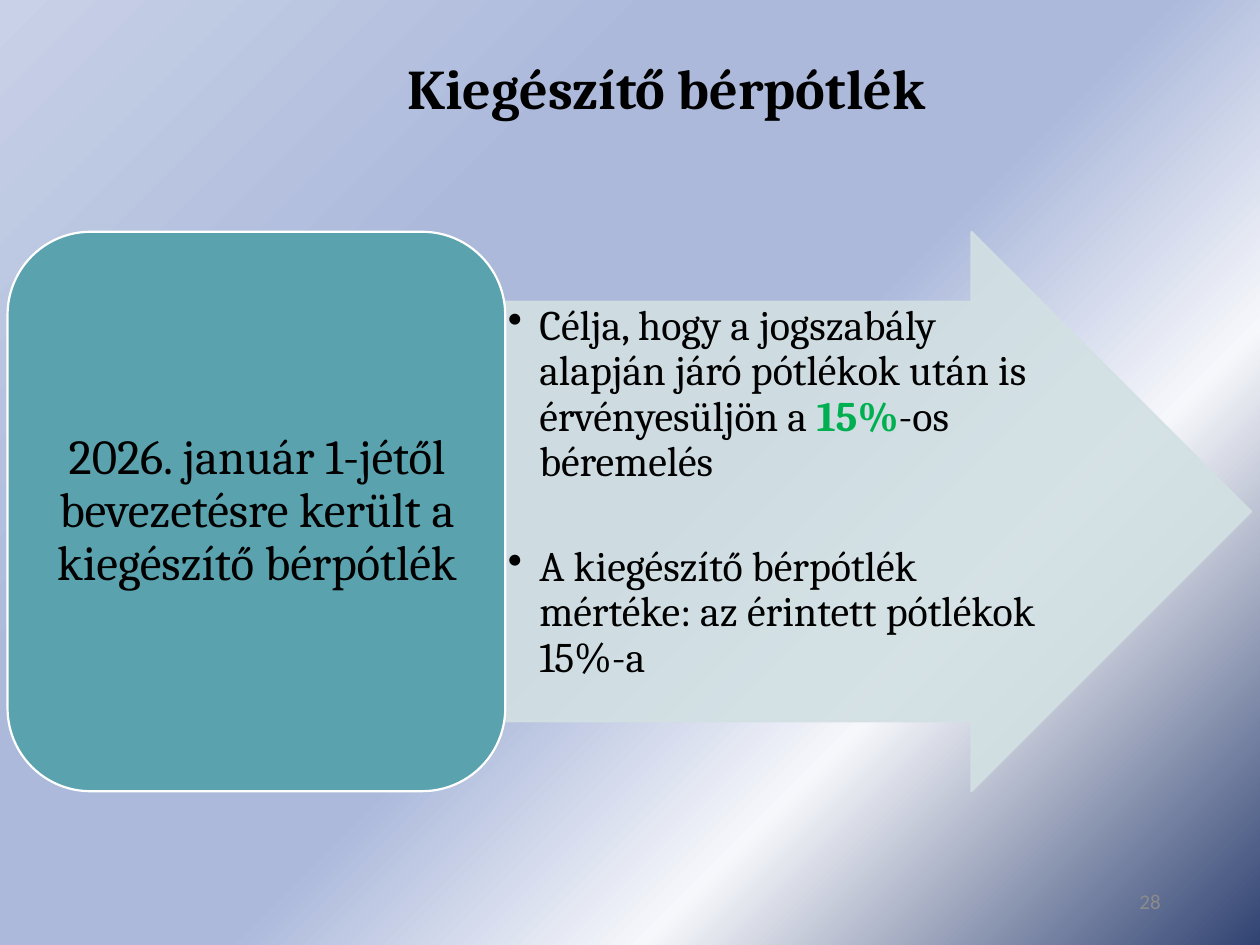
"""Build a slide on the supplementary wage allowance: a rounded block leading into an arrow."""
import pptx
import pptx.dml.color
import pptx.enum.shapes
import pptx.enum.text
import pptx.oxml
import pptx.oxml.ns
import pptx.util

RGBColor = pptx.dml.color.RGBColor
Shape = pptx.enum.shapes.MSO_SHAPE
Align = pptx.enum.text.PP_ALIGN
Anchor = pptx.enum.text.MSO_ANCHOR

BLACK = RGBColor(0x00, 0x00, 0x00)
WHITE = RGBColor(0xFF, 0xFF, 0xFF)
GREEN = RGBColor(0x00, 0xB0, 0x50)
GREY = RGBColor(0x8B, 0x8B, 0x8B)
TEAL = RGBColor(0x5A, 0xA2, 0xAE)
PALE = RGBColor(0xD2, 0xE0, 0xE3)
NAVY = RGBColor(0x31, 0x43, 0x72)
MIST = RGBColor(0xF6, 0xF7, 0xFB)
PERIWINKLE = RGBColor(0xAC, 0xB9, 0xDB)
LILAC = RGBColor(0xC8, 0xD1, 0xE7)
BACKDROP = [(0, NAVY, 87), (28, MIST, 100), (47, PERIWINKLE, 100),
            (69, PERIWINKLE, 100), (100, LILAC, 100)]

WIDTH, HEIGHT = pptx.util.Inches(10), pptx.util.Inches(7.5)
BAND_TOP, BAND_HEIGHT = 24.53, 59.2
BLOCK_LEFT, BLOCK_WIDTH = 0.6, 39.5
ARROW_LEFT = BLOCK_LEFT + BLOCK_WIDTH
SHAFT = 0.75


def place(left, top, width, height):
    """Turn percentages of the slide into lengths."""
    return [int(share * side / 100) for share, side in
            zip((left, top, width, height), (WIDTH, HEIGHT) * 2)]


def paint_background(page, stops):
    """Fill the page with a gradient spreading from its lower right corner."""
    page.background.fill.gradient()
    gradient = page.background._cSld.find(".//" + pptx.oxml.ns.qn("a:gradFill"))
    marks = "".join(
        f'<a:gs pos="{position * 1000}"><a:srgbClr val="{color}">'
        f'<a:alpha val="{alpha * 1000}"/></a:srgbClr></a:gs>'
        for position, color, alpha in stops)
    gradient.getparent().replace(gradient, pptx.oxml.parse_xml(
        f'<a:gradFill {pptx.oxml.ns.nsdecls("a")} rotWithShape="1"><a:gsLst>{marks}</a:gsLst>'
        '<a:path path="circle"><a:fillToRect l="100000" t="100000"/></a:path></a:gradFill>'))


def add_block(page, kind, area, color, outline, alpha=100):
    """Add a filled preset shape with an outline."""
    block = page.shapes.add_shape(kind, *place(*area))
    block.shadow.inherit = False
    block.fill.solid()
    block.fill.fore_color.rgb = color
    block.line.color.rgb = outline
    block.line.width = pptx.util.Pt(1.25)
    if alpha < 100:
        for tone in block._element.spPr.iter(pptx.oxml.ns.qn("a:srgbClr")):
            tone.append(pptx.oxml.parse_xml(
                f'<a:alpha {pptx.oxml.ns.nsdecls("a")} val="{alpha * 1000}"/>'))
    return block


def add_bullet(para):
    """Give the paragraph a hanging round bullet."""
    properties = para._p.get_or_add_pPr()
    indent = pptx.util.Inches(0.25)
    properties.set("marL", str(indent))
    properties.set("indent", str(-indent))
    properties.append(pptx.oxml.parse_xml(
        f'<a:buChar {pptx.oxml.ns.nsdecls("a")} char="•"/>'))


def add_text(page, area, paragraphs, size, font="Cambria", color=BLACK, bold=False,
             align=Align.LEFT, anchor=Anchor.MIDDLE, insets=(0.1, 0.05),
             bullets=False, gap=0):
    """Add a text box; each paragraph is a list of (text, highlighted) spans."""
    box = page.shapes.add_textbox(*place(*area))
    frame = box.text_frame
    frame.word_wrap = True
    frame.vertical_anchor = anchor
    frame.margin_left = frame.margin_right = pptx.util.Inches(insets[0])
    frame.margin_top = frame.margin_bottom = pptx.util.Inches(insets[1])
    for index, spans in enumerate(paragraphs):
        para = frame.add_paragraph() if index else frame.paragraphs[0]
        if bullets:
            add_bullet(para)
        para.alignment = align
        para.line_spacing = 0.9
        if index:
            para.space_before = pptx.util.Pt(gap)
        for text, highlighted in spans:
            span = para.add_run()
            span.text = text
            span.font.name = font
            span.font.size = pptx.util.Pt(size)
            span.font.bold = bold or highlighted
            span.font.color.rgb = GREEN if highlighted else color
    return box


def main():
    """Build and save the deck."""
    deck = pptx.Presentation()
    deck.slide_width, deck.slide_height = WIDTH, HEIGHT
    page = deck.slides.add_slide(deck.slide_layouts[6])
    paint_background(page, BACKDROP)

    add_text(page, (9.8, 2.4, 86.2, 14.53), [[("Kiegészítő bérpótlék", False)]], 32,
             bold=True, align=Align.CENTER)

    arrow = add_block(page, Shape.RIGHT_ARROW, (ARROW_LEFT, BAND_TOP, 59.2, BAND_HEIGHT),
                      PALE, PALE, alpha=90)
    arrow.adjustments[0] = SHAFT
    arrow.adjustments[1] = 0.5
    shaft_top = BAND_TOP + BAND_HEIGHT * (1 - SHAFT) / 2
    add_text(page, (ARROW_LEFT, shaft_top, 42.5, BAND_HEIGHT * SHAFT),
             [[("Célja, hogy a jogszabály alapján járó pótlékok után is érvényesüljön a ", False),
               ("15%", True), ("-os béremelés", False)],
              [("A kiegészítő bérpótlék mértéke: az érintett pótlékok 15%-a", False)]],
             24, anchor=Anchor.TOP, insets=(0.02, 0.02), bullets=True, gap=34)

    add_block(page, Shape.ROUNDED_RECTANGLE,
              (BLOCK_LEFT, BAND_TOP, BLOCK_WIDTH, BAND_HEIGHT), TEAL, WHITE)
    add_text(page, (BLOCK_LEFT + 2, BAND_TOP + 2.53, BLOCK_WIDTH - 3.9, BAND_HEIGHT - 5.06),
             [[("2026. január 1-jétől bevezetésre került a kiegészítő bérpótlék", False)]],
             28, align=Align.CENTER, insets=(0.12, 0.06))

    add_text(page, (70, 92.8, 23.1, 5.4), [[("28", False)]], 12, font="Calibri",
             color=GREY, align=Align.RIGHT)
    deck.save("out.pptx")


if __name__ == "__main__":
    main()
